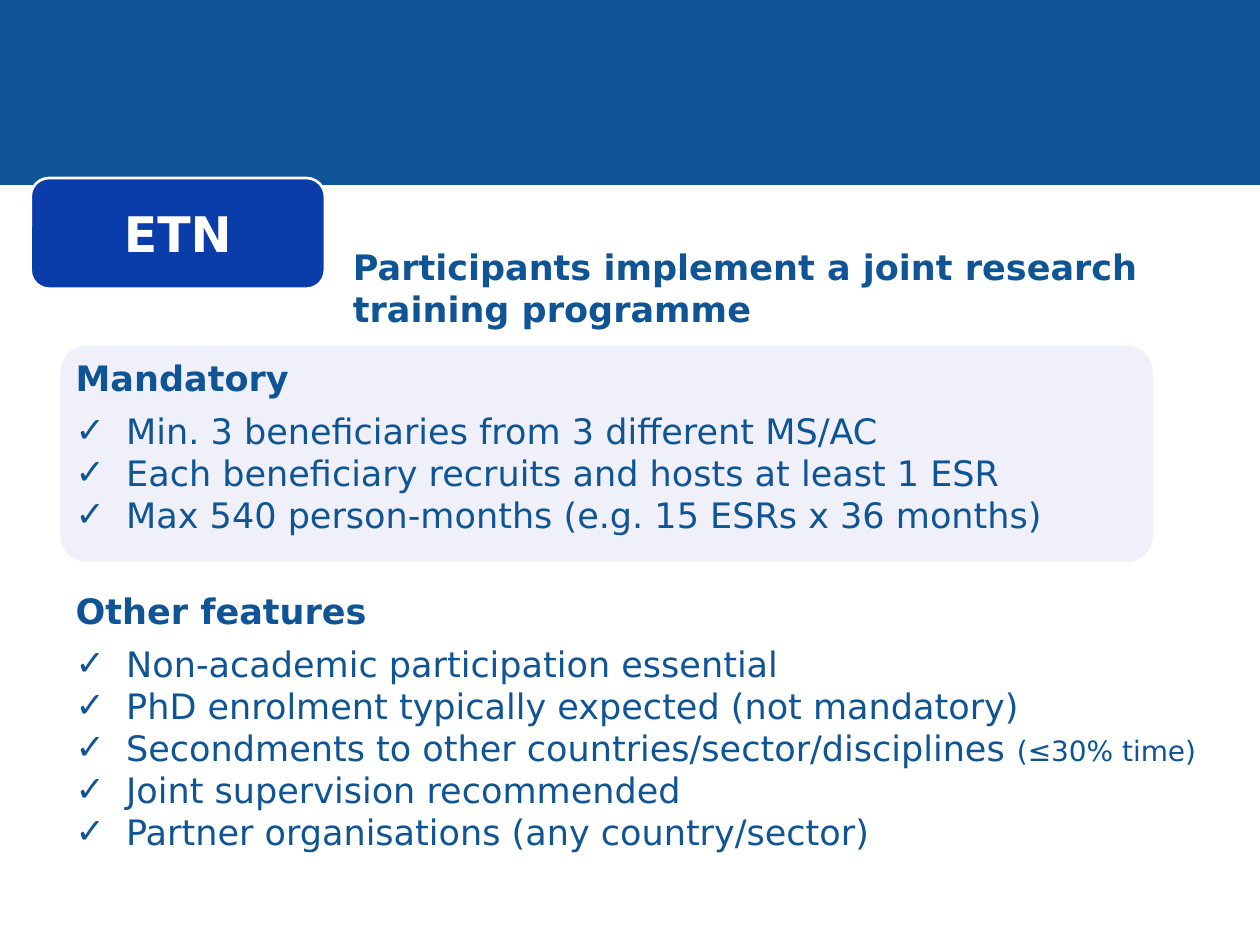
from lxml.etree import SubElement
from pptx import Presentation
from pptx.dml.color import RGBColor
from pptx.enum.shapes import MSO_SHAPE as Shape
from pptx.enum.text import MSO_ANCHOR as Anchor, MSO_AUTO_SIZE as AutoSize, PP_ALIGN as Align
from pptx.oxml.ns import qn
from pptx.util import Cm, Pt

COLORS = {"blue": "0F5494", "badge": "0A3CAA", "panel": "D1D1F0", "white": "FFFFFF"}
FONT = "DejaVu Sans"


def write(paragraph, text, size=20, bold=False, color="blue", align=Align.LEFT,
          after=0, bullet=None, small=""):
    """Format a paragraph; small is a trailing run in a lesser size."""
    properties = paragraph._p.get_or_add_pPr()
    indent = Cm(1.02) if bullet else 0
    properties.set("marL", str(indent))
    properties.set("indent", str(-indent))
    if bullet:
        SubElement(properties, qn("a:buFont"), typeface=FONT)
        SubElement(properties, qn("a:buChar"), char=bullet)
    else:
        SubElement(properties, qn("a:buNone"))
    paragraph.alignment = align
    paragraph.space_before = Pt(0)
    paragraph.space_after = Pt(after)
    for words, points in ((text, size), (small, 16)):
        if words:
            run = paragraph.add_run()
            run.text = words
            run.font.name = FONT
            run.font.size = Pt(points)
            run.font.bold = bold
            run.font.color.rgb = RGBColor.from_string(COLORS[color])


def add_block(kind, left, top, width, height, color):
    shape = slide.shapes.add_shape(kind, Cm(left), Cm(top), Cm(width), Cm(height))
    shape.shadow.inherit = False
    shape.fill.solid()
    shape.fill.fore_color.rgb = RGBColor.from_string(COLORS[color])
    shape.line.fill.background()
    return shape


presentation = Presentation()
presentation.slide_width = Cm(25.4)
presentation.slide_height = Cm(19.05)
slide = presentation.slides.add_slide(presentation.slide_layouts[3])

add_block(Shape.RECTANGLE, 0, 0, 25.4, 3.73, "blue")

panel = add_block(Shape.ROUNDED_RECTANGLE, 1.22, 6.97, 22.02, 4.36, "panel")
panel.adjustments[0] = 0.12
panel_color = panel.fill._xPr.find(qn("a:solidFill"))[0]
SubElement(panel_color, qn("a:alpha"), val="31000")

badge = add_block(Shape.ROUNDED_RECTANGLE, 0.62, 3.59, 5.93, 2.23, "badge")
badge.line.color.rgb = RGBColor.from_string(COLORS["white"])
badge.line.width = Pt(1.5)
badge.text_frame.vertical_anchor = Anchor.MIDDLE
write(badge.text_frame.paragraphs[0], "ETN", size=28, bold=True, color="white",
      align=Align.CENTER)

# Placeholders come first in the slide; move them in front of the panel.
title, mandatory, other = list(slide.placeholders)
for placeholder, left, top, width, height in (
    (title, 6.86, 4.83, 18.54, 1.96),
    (mandatory, 1.27, 7.06, 21.72, 3.89),
    (other, 1.27, 11.76, 23.5, 5.59),
):
    slide.shapes._spTree.append(placeholder._element)
    placeholder.left, placeholder.top = Cm(left), Cm(top)
    placeholder.width, placeholder.height = Cm(width), Cm(height)
    placeholder.text_frame.word_wrap = True
    placeholder.text_frame.auto_size = AutoSize.NONE
    placeholder.text_frame.vertical_anchor = Anchor.TOP

write(title.text_frame.paragraphs[0],
      "Participants implement a joint research training programme", bold=True)

for placeholder, heading, items in (
    (mandatory, "Mandatory", (
        ("Min. 3 beneficiaries from 3 different MS/AC", ""),
        ("Each beneficiary recruits and hosts at least 1 ESR", ""),
        ("Max 540 person-months (e.g. 15 ESRs x 36 months)", ""),
    )),
    (other, "Other features", (
        ("Non-academic participation essential", ""),
        ("PhD enrolment typically expected (not mandatory)", ""),
        ("Secondments to other countries/sector/disciplines ", "(≤30% time)"),
        ("Joint supervision recommended", ""),
        ("Partner organisations (any country/sector)", ""),
    )),
):
    frame = placeholder.text_frame
    write(frame.paragraphs[0], heading, bold=True, after=6)
    for item, note in items:
        write(frame.add_paragraph(), item, bullet="✓", small=note)

presentation.save("out.pptx")
